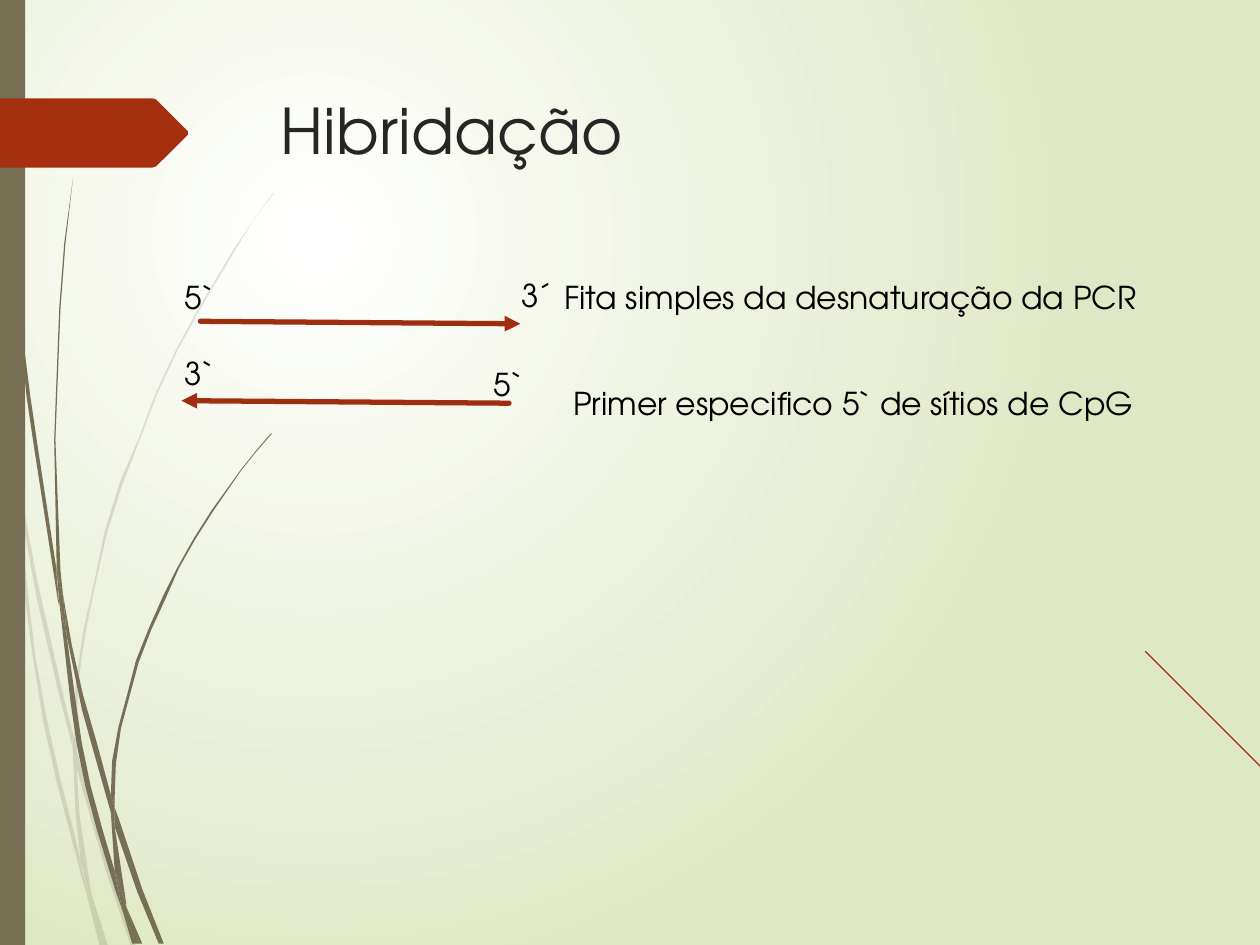
from lxml import etree
from pptx import Presentation
from pptx import util as u
from pptx.dml.color import RGBColor
from pptx.enum import shapes, text
from pptx.oxml import ns

PX = 9144
FONT = "TeX Gyre Adventor"
OLIVE, RED, DARK_RED = "766F54", "A53010", "9E2E0F"

TITLE = ("Hibridação", (213, 68, 721, 78))
END_LABELS = [
    ("5`", 137, 216), ("3´", 404, 214),
    ("3`", 137, 276), ("5`", 382, 285),
]
CAPTIONS = [
    ("Fita simples da desnaturação da PCR", (438, 216, 496, 40)),
    ("Primer especifico 5` de sítios de CpG", (445, 300, 488, 40)),
]
STRANDS = [((159, 255), (413, 257)), ((404, 320), (144, 318))]
CORNER_LINE = ((909, 517), (1009, 617))
SIDE_BAR = (0, 0, 20, 750)
TITLE_TAG = [(149, 107), (124, 132), (121, 133), (0, 133), (0, 78),
             (121, 78), (124, 79), (149, 104)]

PALE_BLADES = [
    [(8, 350), (6, 322), (0, 282), (0, 299), (7, 344)],
    [(40, 522), (46, 548), (59, 599), (59, 586), (53, 564), (43, 520), (30, 463),
     (19, 404), (10, 345), (12, 376), (20, 425), (29, 474)],
    [(64, 607), (61, 596), (61, 610), (69, 639), (85, 694), (104, 751), (108, 751),
     (101, 731), (88, 692), (80, 664)],
    [(83, 751), (86, 751), (73, 711)],
    [(64, 683), (59, 662), (48, 619), (37, 570), (28, 520), (22, 469), (12, 376),
     (8, 350), (10, 390), (19, 470), (26, 521), (34, 571), (45, 621), (64, 693),
     (70, 714), (69, 707)],
    [(58, 599), (60, 646), (64, 683), (67, 692), (73, 711), (72, 706), (63, 646),
     (61, 610), (61, 608)],
    [(61, 584), (62, 542), (68, 501), (76, 462), (85, 423), (97, 385), (111, 349),
     (125, 312), (141, 278), (159, 245), (187, 198), (201, 175), (217, 154),
     (217, 153), (201, 175), (186, 197), (158, 244), (140, 277), (124, 311),
     (110, 348), (95, 383), (83, 422), (75, 461), (66, 501), (60, 542), (59, 584),
     (59, 586), (61, 596)],
    [(70, 714), (79, 751), (82, 751)],
    [(61, 608), (61, 596), (59, 586), (58, 599)],
    [(67, 692), (65, 683), (69, 707), (70, 714), (82, 751), (83, 751), (73, 711)],
]
DARK_BLADES = [
    [(5, 110), (14, 233), (17, 274), (21, 314), (27, 355), (46, 477), (47, 481),
     (45, 457), (45, 453), (30, 355), (24, 314), (19, 274), (15, 232), (6, 109),
     (4, 48), (3, 0), (2, 0), (3, 48)],
    [(73, 592), (88, 645), (88, 633), (88, 631), (77, 590), (66, 552), (57, 512),
     (50, 472), (53, 505), (59, 534), (65, 563)],
    [(94, 649), (91, 641), (91, 656), (109, 708), (126, 749), (130, 749),
     (113, 706)],
    [(91, 691), (81, 657), (72, 624), (65, 590), (60, 556), (53, 505), (47, 477),
     (56, 557), (61, 591), (68, 625), (77, 659), (92, 708), (97, 722), (96, 717)],
    [(50, 472), (48, 453), (44, 349), (48, 245), (52, 193), (58, 141), (51, 193),
     (47, 245), (43, 349), (45, 449), (49, 472)],
    [(110, 749), (113, 749), (100, 719)],
    [(47, 477), (53, 505), (50, 472), (49, 472), (45, 449), (45, 453)],
    [(91, 633), (92, 606), (96, 578), (103, 552), (110, 526), (120, 500), (131, 476),
     (142, 451), (155, 428), (169, 406), (191, 374), (203, 359), (216, 344),
     (215, 344), (203, 358), (191, 373), (168, 405), (154, 427), (141, 450),
     (129, 474), (118, 499), (108, 524), (101, 551), (94, 577), (89, 604),
     (88, 631), (91, 641)],
    [(97, 722), (105, 749), (108, 749)],
    [(88, 645), (91, 691), (96, 706), (100, 719), (100, 716), (91, 656), (90, 651)],
    [(88, 645), (90, 651), (91, 656), (91, 641), (88, 631), (88, 633)],
    [(96, 706), (91, 691), (96, 717), (97, 722), (108, 749), (110, 749), (100, 719)],
]


def colour(value):
    return RGBColor.from_string(value)


def place(*lengths):
    return [length * PX for length in lengths]


def paint(shape, value, alpha=None):
    shape.shadow.inherit = False
    shape.fill.solid()
    shape.fill.fore_color.rgb = colour(value)
    shape.line.fill.background()
    if alpha:
        fill_colour = shape._element.spPr.find(".//" + ns.qn("a:srgbClr"))
        etree.SubElement(fill_colour, ns.qn("a:alpha"), val=str(alpha * 1000))


def add_outline(container, points, value, alpha=None):
    builder = container.build_freeform(*points[0], scale=PX)
    builder.add_line_segments(points[1:], close=True)
    paint(builder.convert_to_shape(), value, alpha)


def format_text(frame, words, size, value):
    frame.text = words
    frame.vertical_anchor = text.MSO_ANCHOR.TOP
    paragraph = frame.paragraphs[0]
    paragraph.alignment = text.PP_ALIGN.LEFT
    font = paragraph.runs[0].font
    font.name, font.size = FONT, u.Pt(size)
    font.color.rgb = colour(value)


def add_label(slide, words, box, wrap):
    frame = slide.shapes.add_textbox(*place(*box)).text_frame
    format_text(frame, words, 18, "000000")
    frame.word_wrap = wrap
    frame.auto_size = text.MSO_AUTO_SIZE.SHAPE_TO_FIT_TEXT


def add_line(slide, ends, width, arrow=False):
    start, finish = ends
    line = slide.shapes.add_connector(
        shapes.MSO_CONNECTOR.STRAIGHT, *place(*start, *finish))
    line.line.width = u.Pt(width)
    line.line.color.rgb = colour(DARK_RED)
    properties = line._element.spPr
    if arrow:
        outline = properties.find(ns.qn("a:ln"))
        outline.set("cap", "rnd")
        etree.SubElement(outline, ns.qn("a:tailEnd"), type="triangle")
    etree.SubElement(properties, ns.qn("a:effectLst"))


def set_background(slide):
    fill = slide.background.fill
    fill.gradient()
    for stop, value, position in zip(fill.gradient_stops, ("FFFFFF", "DFE8C4"), (0, 1)):
        stop.color.rgb = colour(value)
        stop.position = position
    linear = slide._element.find(".//" + ns.qn("a:lin"))
    gradient = linear.getparent()
    gradient.remove(linear)
    radial = etree.SubElement(gradient, ns.qn("a:path"), path="circle")
    etree.SubElement(radial, ns.qn("a:fillToRect"),
                     l="25000", t="25000", r="75000", b="75000")


def main():
    presentation = Presentation()
    presentation.slide_width, presentation.slide_height = place(1000, 750)
    slide = presentation.slides.add_slide(presentation.slide_layouts[5])
    set_background(slide)

    for blades, alpha in ((PALE_BLADES, 20), (DARK_BLADES, None)):
        group = slide.shapes.add_group_shape()
        for points in blades:
            add_outline(group.shapes, points, OLIVE, alpha)
    paint(slide.shapes.add_shape(shapes.MSO_SHAPE.RECTANGLE, *place(*SIDE_BAR)), OLIVE)
    add_outline(slide.shapes, TITLE_TAG, RED)

    words, box = TITLE
    title = slide.shapes.title
    title.left, title.top, title.width, title.height = place(*box)
    format_text(title.text_frame, words, 36, "262626")

    for ends in STRANDS:
        add_line(slide, ends, 3, arrow=True)
    for words, left, top in END_LABELS:
        add_label(slide, words, (left, top, 44, 40), wrap=False)
    for words, box in CAPTIONS:
        add_label(slide, words, box, wrap=True)
    add_line(slide, CORNER_LINE, 0.75)

    presentation.save("out.pptx")


if __name__ == "__main__":
    main()
